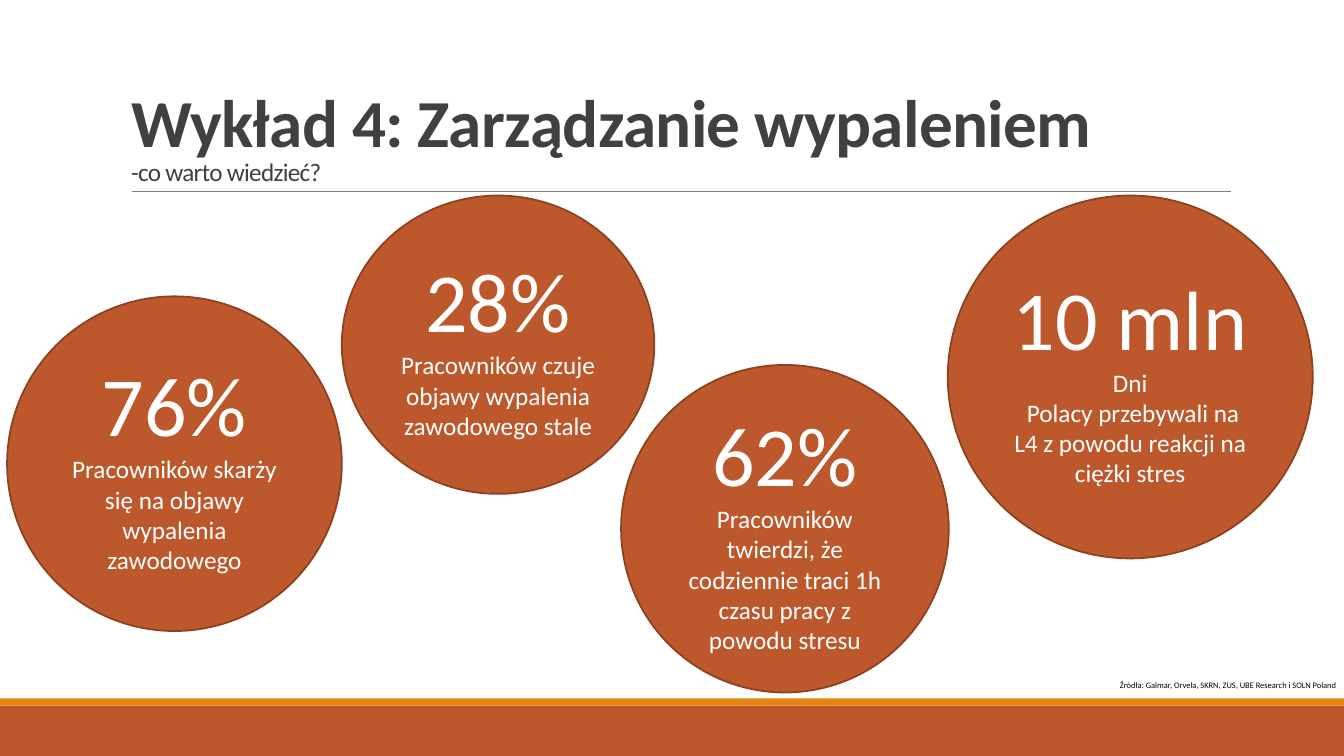
from lxml import etree
from pptx import Presentation
from pptx import util as u
from pptx.dml.color import RGBColor
from pptx.enum import shapes, text
from pptx.oxml.ns import qn

COLORS = {
    "rust": "BD582C",
    "rust_edge": "8C4121",
    "orange": "E48312",
    "rule": "808080",
    "title": "404040",
    "white": "FFFFFF",
    "black": "000000",
}

STATISTICS = [
    ((0.07, 2.94, 3.32, 3.32), "76%",
     ["Pracowników skarży się na objawy wypalenia zawodowego"]),
    ((3.39, 1.94, 3.1, 2.96), "28%",
     ["Pracowników czuje objawy wypalenia zawodowego stale"]),
    ((6.16, 3.62, 3.25, 3.25), "62%",
     ["Pracowników twierdzi, że codziennie traci 1h czasu pracy z powodu stresu"]),
    ((9.4, 1.94, 3.62, 3.6), "10 mln",
     ["Dni", " Polacy przebywali na L4 z powodu reakcji na ciężki stres"]),
]


def color(name):
    return RGBColor.from_string(COLORS[name])


def add_text(paragraph, content, size=18, fill="white", bold=False, spacing=None):
    run = paragraph.add_run()
    run.text = content
    run.font.name = "Calibri"
    run.font.size = u.Pt(size)
    run.font.bold = bold
    run.font.color.rgb = color(fill)
    if spacing is not None:
        run.font._element.set("spc", str(int(spacing * 100)))


class SlideBuilder:
    """Draws styled elements on the current slide."""

    def __init__(self, presentation):
        self.slide = presentation.slides.add_slide(presentation.slide_layouts[5])

    def shape(self, kind, box, fill, edge=None):
        shape = self.slide.shapes.add_shape(kind, *map(u.Inches, box))
        shape.shadow.inherit = False
        shape.fill.solid()
        shape.fill.fore_color.rgb = color(fill)
        if edge:
            shape.line.color.rgb = color(edge)
            shape.line.width = u.Pt(1.25)
        else:
            shape.line.fill.background()
        return shape

    def rule(self, left, right, top):
        line = self.slide.shapes.add_connector(
            shapes.MSO_CONNECTOR.STRAIGHT,
            u.Inches(left), u.Inches(top), u.Inches(right), u.Inches(top))
        line.line.color.rgb = color("rule")
        line.line.width = u.Pt(0.5)
        etree.SubElement(line._element.spPr, qn("a:effectLst"))

    def title(self, heading, subtitle):
        title = self.slide.shapes.title
        title.left, title.top, title.width, title.height = map(
            u.Inches, (1.2, 0.5, 11, 1.4))
        frame = title.text_frame
        frame.auto_size = text.MSO_AUTO_SIZE.NONE
        frame.vertical_anchor = text.MSO_ANCHOR.BOTTOM
        paragraph = frame.paragraphs[0]
        paragraph.alignment = text.PP_ALIGN.LEFT
        paragraph.line_spacing = 0.85
        add_text(paragraph, heading, size=48, fill="title", bold=True, spacing=-0.5)
        paragraph.add_line_break()
        add_text(paragraph, subtitle, fill="title", spacing=-0.5)

    def statistic(self, box, figure, captions):
        circle = self.shape(shapes.MSO_SHAPE.OVAL, box, "rust", "rust_edge")
        frame = circle.text_frame
        frame.word_wrap = True
        frame.vertical_anchor = text.MSO_ANCHOR.MIDDLE
        add_text(frame.paragraphs[0], figure, size=60)
        for caption in captions:
            add_text(frame.add_paragraph(), caption)
        for paragraph in frame.paragraphs:
            paragraph.alignment = text.PP_ALIGN.CENTER

    def source_note(self, box, content):
        frame = self.slide.shapes.add_textbox(*map(u.Inches, box)).text_frame
        frame.word_wrap = False
        frame.auto_size = text.MSO_AUTO_SIZE.SHAPE_TO_FIT_TEXT
        add_text(frame.paragraphs[0], content, size=6, fill="black")


def main():
    presentation = Presentation()
    presentation.slide_width = u.Inches(13.33)
    presentation.slide_height = u.Inches(7.5)
    builder = SlideBuilder(presentation)
    builder.shape(shapes.MSO_SHAPE.RECTANGLE, (0, 7, 13.33, 0.5), "rust")
    builder.shape(shapes.MSO_SHAPE.RECTANGLE, (0, 6.93, 13.33, 0.07), "orange")
    builder.rule(1.31, 12.21, 1.9)
    builder.title("Wykład 4: Zarządzanie wypaleniem", "-co warto wiedzieć?")
    for box, figure, captions in STATISTICS:
        builder.statistic(box, figure, captions)
    builder.source_note(
        (11.01, 6.7, 2.38, 0.2),
        "Źródła: Galmar, Orvela, SKRN, ZUS, UBE Research i SOLN Poland")
    presentation.save("out.pptx")


if __name__ == "__main__":
    main()
